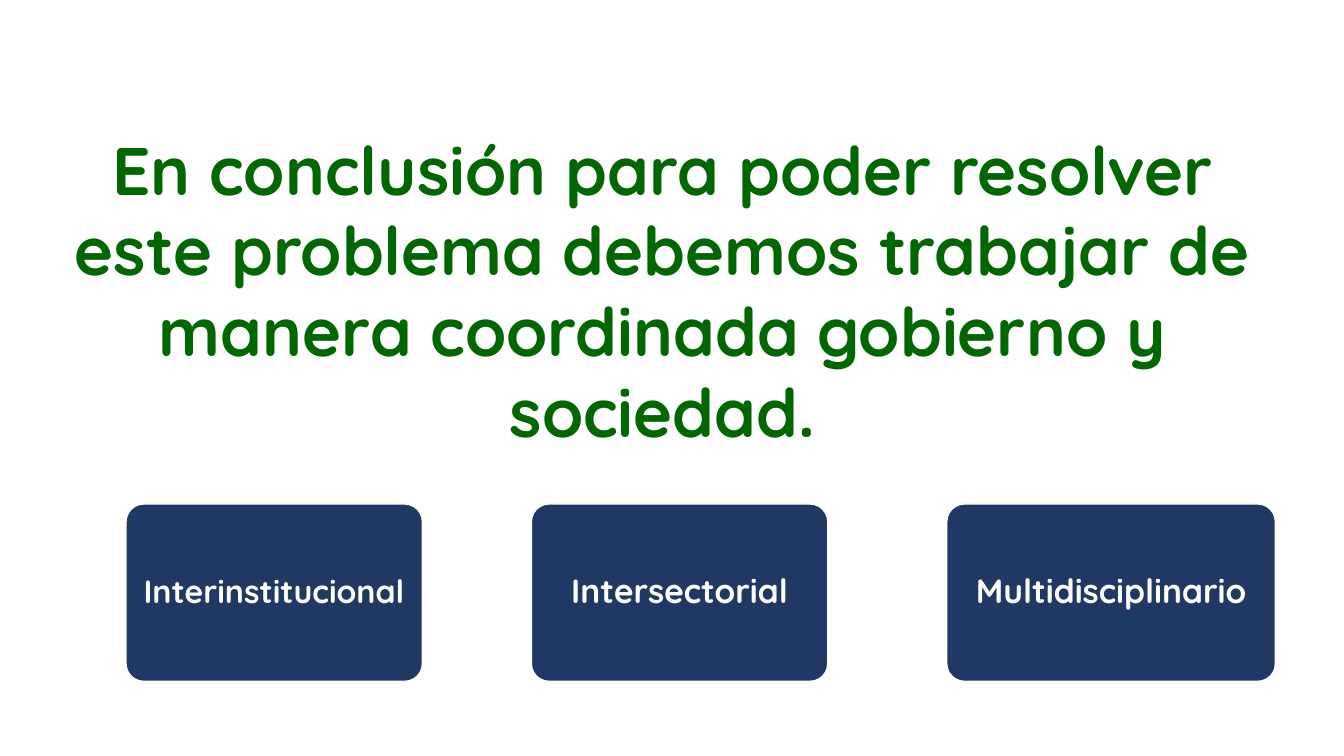
from dataclasses import dataclass

from pptx import Presentation
from pptx.dml.color import RGBColor
from pptx.enum.shapes import MSO_SHAPE
from pptx.enum.text import MSO_ANCHOR, PP_ALIGN
from pptx.util import Inches, Pt

ROUNDED = MSO_SHAPE.ROUNDED_RECTANGLE
MIDDLE = MSO_ANCHOR.MIDDLE
CENTER = PP_ALIGN.CENTER


@dataclass(frozen=True)
class Theme:
    font: str = "Quicksand"
    green: RGBColor = RGBColor(0x00, 0x66, 0x00)
    navy: RGBColor = RGBColor(0x20, 0x38, 0x64)
    white: RGBColor = RGBColor(0xFF, 0xFF, 0xFF)
    statement_size: int = 48
    card_size: int = 24
    long_card_size: int = 23


THEME = Theme()
CARD_TOP = 5
CARD_HEIGHT = 1.76
CARD_INSET = 0.05
CARDS = [
    ("Interinstitucional", 1.25, 2.94, THEME.long_card_size),
    ("Intersectorial", 5.27, 2.94, THEME.card_size),
    ("Multidisciplinario", 9.39, 3.26, THEME.card_size),
]


def write_centered(frame, text, size, color):
    frame.word_wrap = True
    frame.text = text
    para = frame.paragraphs[0]
    para.alignment = CENTER
    font = para.runs[0].font
    font.name = THEME.font
    font.size = Pt(size)
    font.bold = True
    font.color.rgb = color
    return para


def add_statement(page, text):
    box = page.shapes.add_textbox(Inches(0.3), Inches(1.22), Inches(12.54), Inches(3.33))
    write_centered(box.text_frame, text, THEME.statement_size, THEME.green)


def add_card(page, label, left, width, size):
    card = page.shapes.add_shape(
        ROUNDED, Inches(left), Inches(CARD_TOP), Inches(width), Inches(CARD_HEIGHT)
    )
    card.adjustments[0] = 0.1
    card.shadow.inherit = False
    card.fill.solid()
    card.fill.fore_color.rgb = THEME.navy
    card.line.color.rgb = THEME.white
    card.line.width = Pt(1)
    frame = card.text_frame
    frame.vertical_anchor = MIDDLE
    frame.margin_left = frame.margin_right = Inches(CARD_INSET)
    frame.margin_top = frame.margin_bottom = Inches(CARD_INSET)
    para = write_centered(frame, label, size, THEME.white)
    para.line_spacing = 0.9


def main():
    deck = Presentation()
    deck.slide_width = Inches(13.33)
    deck.slide_height = Inches(7.5)
    page = deck.slides.add_slide(deck.slide_layouts[6])
    add_statement(
        page,
        "En conclusión para poder resolver este problema debemos trabajar "
        "de manera coordinada gobierno y sociedad.",
    )
    for label, left, width, size in CARDS:
        add_card(page, label, left, width, size)
    deck.save("out.pptx")


if __name__ == "__main__":
    main()
